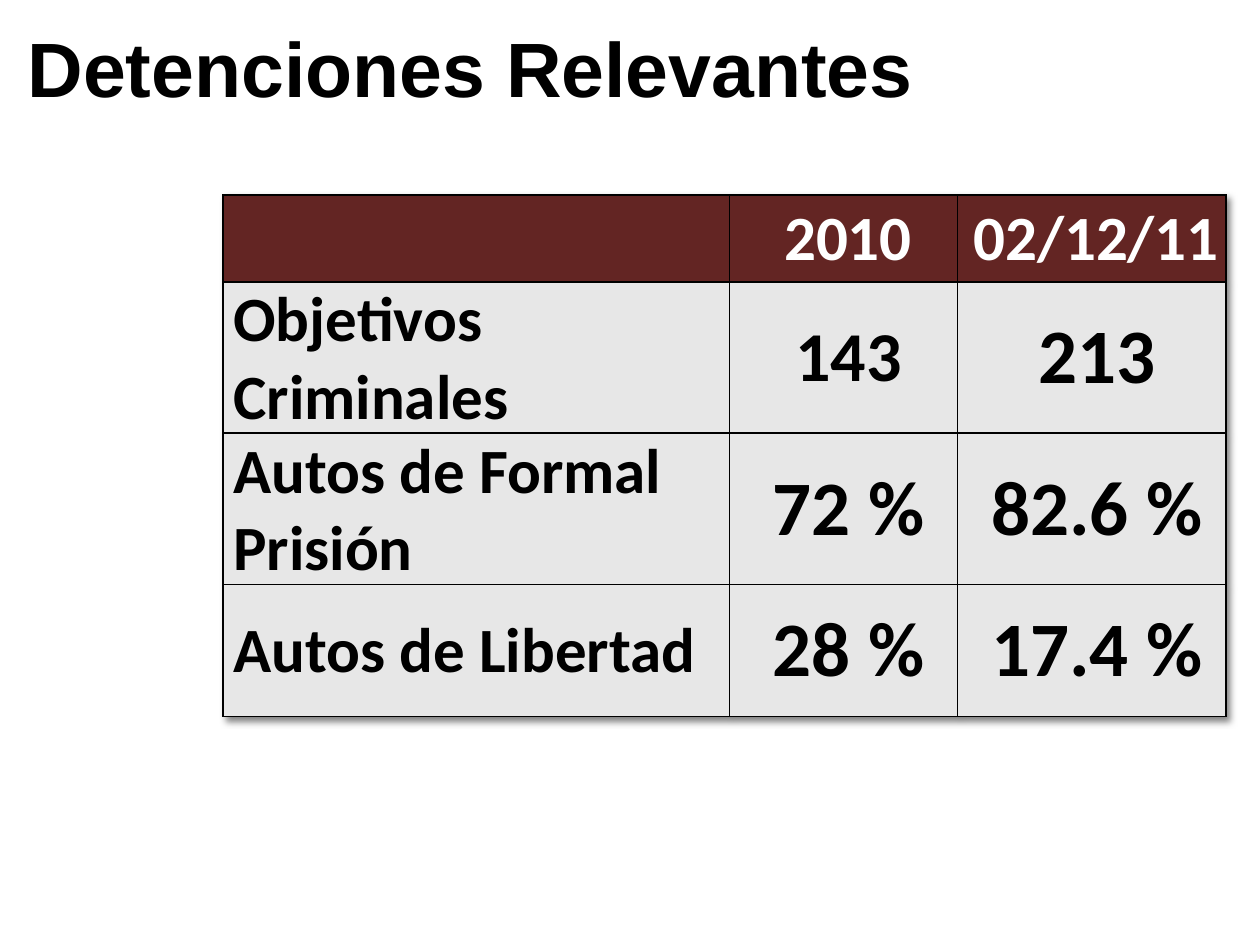
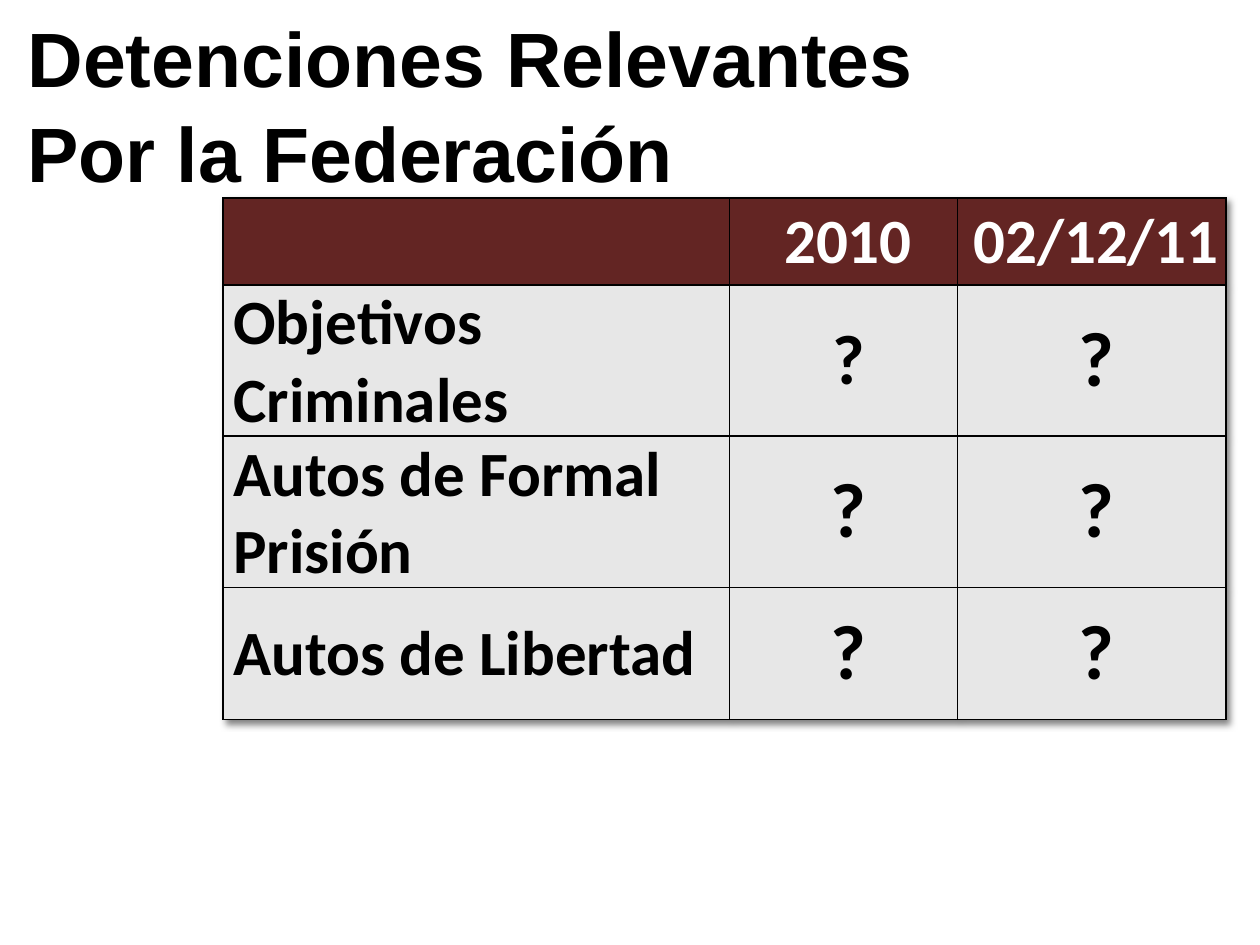
"""Build two slides that compare relevant detentions in 2010 and 2011."""
from dataclasses import dataclass

from lxml.etree import SubElement
from pptx import Presentation
from pptx.dml.color import RGBColor as Rgb
from pptx.enum.text import MSO_ANCHOR as Anchor, PP_ALIGN as Align
from pptx.oxml import parse_xml
from pptx.oxml.ns import nsdecls, qn
from pptx.util import Pt

PERIODS = ("2010", "02/12/11")
MEASURES = ("Objetivos Criminales", "Autos de Formal Prisión", "Autos de Libertad")
SLIDES = [
    {
        "heading": ["Detenciones Relevantes"],
        "heading_top": 3.6,
        "table_top": 111.4,
        "figures": [("143", "213"), ("72 %", "82.6 %"), ("28 %", "17.4 %")],
    },
    {
        "heading": ["Detenciones Relevantes", "Por la Federación"],
        "heading_top": -2.2,
        "table_top": 113.1,
        "figures": [("?", "?")] * len(MEASURES),
    },
]


@dataclass(frozen=True)
class Theme:
    """Colours, fonts and type sizes."""
    ink: str = "000000"
    header_ink: str = "FFFFFF"
    header_fill: str = "632523"
    body_fill: str = "E7E7E7"
    heading_font: str = "Arial"
    table_font: str = "Calibri"
    heading_size: int = 44
    label_size: int = 36
    first_figure_size: int = 40
    figure_size: int = 44
    border: float = 1


THEME = Theme()
HEADING_LEFT, HEADING_WIDTH, HEADING_HEIGHT = 8.6, 550, 45.4
TABLE_LEFT = 127.4
COLUMN_WIDTHS = (289.4, 130.3, 153.4)
HEADER_HEIGHT, ROW_HEIGHT = 49.7, 75.6
SHADOW = (
    f'<a:effectLst {nsdecls("a")}><a:outerShdw blurRad="{Pt(4)}" dist="{Pt(3)}" '
    'dir="2700000" algn="tl" rotWithShape="0"><a:srgbClr val="000000">'
    '<a:alpha val="50000"/></a:srgbClr></a:outerShdw></a:effectLst>'
)


def style_font(paragraph, name, size, colour):
    font = paragraph.font
    font.name, font.size, font.bold = name, Pt(size), True
    font.color.rgb = Rgb.from_string(colour)


def add_heading(slide, lines, top):
    heading = slide.shapes.add_textbox(
        Pt(HEADING_LEFT), Pt(top), Pt(HEADING_WIDTH), Pt(HEADING_HEIGHT)).text_frame
    heading.word_wrap = True
    heading.margin_top = Pt(8)
    heading.text = "\n".join(lines)
    for index, paragraph in enumerate(heading.paragraphs):
        if index:
            paragraph.space_before = Pt(2)
        style_font(paragraph, THEME.heading_font, THEME.heading_size, THEME.ink)


def add_borders(cell):
    properties = cell._tc.get_or_add_tcPr()
    for side in ("lnL", "lnR", "lnT", "lnB"):
        line = SubElement(properties, qn(f"a:{side}"), w=str(Pt(THEME.border)))
        SubElement(SubElement(line, qn("a:solidFill")), qn("a:srgbClr"), val=THEME.ink)


def fill_cell(cell, text, row, column):
    is_header = row == 0
    add_borders(cell)
    cell.fill.solid()
    cell.fill.fore_color.rgb = Rgb.from_string(
        THEME.header_fill if is_header else THEME.body_fill)
    cell.vertical_anchor = Anchor.MIDDLE
    cell.margin_left = Pt(6)
    cell.margin_top = cell.margin_right = Pt(0.7 if is_header else 0)
    cell.margin_bottom = Pt(0)
    if is_header or column == 0:
        size = THEME.label_size
    else:
        size = THEME.first_figure_size if (row, column) == (1, 1) else THEME.figure_size
    cell.text = text
    paragraph = cell.text_frame.paragraphs[0]
    paragraph.alignment = Align.CENTER if column else Align.LEFT
    style_font(paragraph, THEME.table_font, size,
               THEME.header_ink if is_header else THEME.ink)


def add_comparison(slide, figures, top):
    rows = [("", *PERIODS)] + [(name, *values) for name, values in zip(MEASURES, figures)]
    heights = [HEADER_HEIGHT] + [ROW_HEIGHT] * len(MEASURES)
    comparison = slide.shapes.add_table(
        len(rows), len(COLUMN_WIDTHS), Pt(TABLE_LEFT), Pt(top),
        Pt(sum(COLUMN_WIDTHS)), Pt(sum(heights))).table
    comparison.first_row = comparison.horz_banding = False
    comparison._tbl.tblPr.insert(0, parse_xml(SHADOW))
    for column, width in zip(comparison.columns, COLUMN_WIDTHS):
        column.width = Pt(width)
    for row, (texts, height) in enumerate(zip(rows, heights)):
        comparison.rows[row].height = Pt(height)
        for column, text in enumerate(texts):
            fill_cell(comparison.cell(row, column), text, row, column)


def main():
    deck = Presentation()
    deck.slide_width, deck.slide_height = Pt(720), Pt(540)
    for content in SLIDES:
        slide = deck.slides.add_slide(deck.slide_layouts[6])
        add_heading(slide, content["heading"], content["heading_top"])
        add_comparison(slide, content["figures"], content["table_top"])
    deck.save("out.pptx")


if __name__ == "__main__":
    main()
